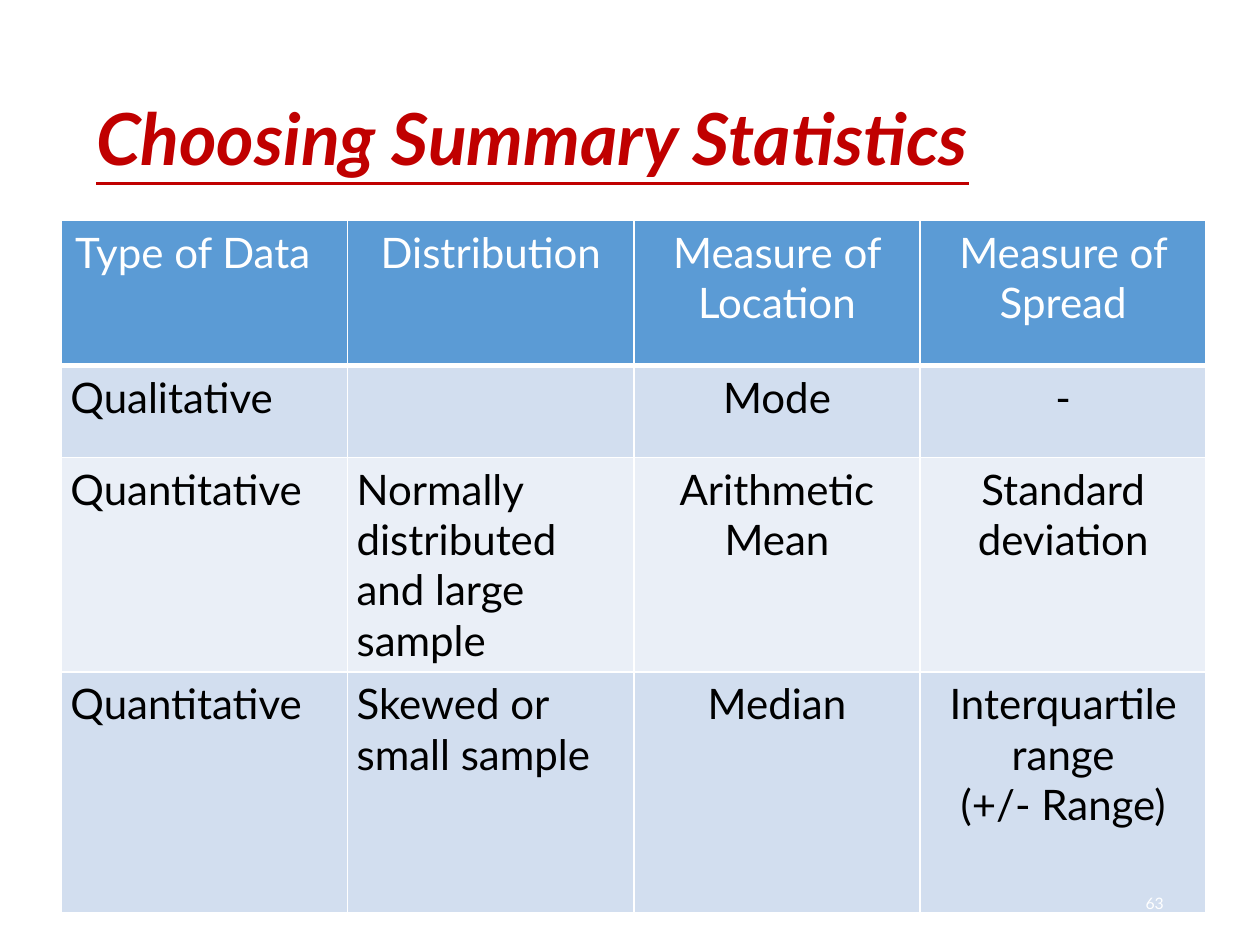
from lxml.etree import SubElement as Sub
from pptx import Presentation
from pptx.dml.color import RGBColor as RGB
from pptx.enum.text import MSO_ANCHOR as Anchor, PP_ALIGN as Align
from pptx.oxml.ns import qn
from pptx.util import Cm, Pt

FONT = "Lato"
RED = RGB(0xC0, 0x00, 0x00)
WHITE = RGB(0xFF, 0xFF, 0xFF)
BLACK = RGB(0x00, 0x00, 0x00)
BLUE = RGB(0x5B, 0x9B, 0xD5)
BANDS = [RGB(0xD2, 0xDE, 0xEF), RGB(0xEA, 0xEF, 0xF7)]

ROWS = [
    ["Type of Data", "Distribution", "Measure of Location", "Measure of Spread"],
    ["Qualitative", "", "Mode", "-"],
    ["Quantitative", "Normally distributed and large sample",
     "Arithmetic Mean", "Standard deviation"],
    ["Quantitative", "Skewed or small sample", "Median",
     "Interquartile range\n(+/- Range)"],
]
HEIGHTS = [2.92, 1.85, 3.58, 4.85]


def add_run(para, text, size, color):
    run = para.add_run()
    run.text = text
    font = run.font
    font.name, font.size = FONT, Pt(size)
    font.color.rgb = color
    return font


def add_box(slide, box, anchor):
    frame = slide.shapes.add_textbox(*map(Cm, box)).text_frame
    frame.word_wrap = True
    frame.vertical_anchor = anchor
    frame.margin_left = frame.margin_right = Cm(0.19)
    frame.margin_top = frame.margin_bottom = Cm(0.1)
    return frame.paragraphs[0]


def add_title(slide, box):
    para = add_box(slide, box, Anchor.MIDDLE)
    para.line_spacing = 0.9
    font = add_run(para, "Choosing Summary Statistics", 41, RED)
    font.bold = font.italic = font.underline = True


def add_number(slide, box):
    para = add_box(slide, box, Anchor.MIDDLE)
    para.alignment = Align.RIGHT
    add_run(para, "63", 9, WHITE)


def set_edges(cell, base):
    """Draw white borders, with the given width at the bottom."""
    props = cell._tc.get_or_add_tcPr()
    for side, width in zip("LRTB", (1, 1, 1, base)):
        line = Sub(props, qn(f"a:ln{side}"), w=str(Pt(width)))
        fill = Sub(line, qn("a:solidFill"))
        Sub(fill, qn("a:srgbClr"), val=str(WHITE))


def fill_cell(cell, text, row, col):
    head = row == 0
    set_edges(cell, 3 if head else 1)
    cell.fill.solid()
    cell.fill.fore_color.rgb = BLUE if head else BANDS[(row - 1) % 2]
    cell.margin_left = cell.margin_right = Cm(0.18)
    cell.margin_top = cell.margin_bottom = Cm(0.13)
    frame = cell.text_frame
    for num, part in enumerate(text.split("\n")):
        para = frame.add_paragraph() if num else frame.paragraphs[0]
        para.alignment = Align.CENTER if head or col > 1 else Align.LEFT
        if part:
            add_run(para, part, 24, WHITE if head else BLACK)


def add_grid(slide, box):
    shape = slide.shapes.add_table(len(ROWS), len(ROWS[0]), *map(Cm, box))
    table = shape.table
    for col in table.columns:
        col.width = Cm(box[2] / len(ROWS[0]))
    for row, texts in enumerate(ROWS):
        table.rows[row].height = Cm(HEIGHTS[row])
        for col, text in enumerate(texts):
            fill_cell(table.cell(row, col), text, row, col)
    # The first heading sits a little left of centre
    table.cell(0, 0).margin_right = Cm(0.66)


def main():
    deck = Presentation()
    deck.slide_width, deck.slide_height = Cm(25.4), Cm(19.05)
    slide = deck.slides.add_slide(deck.slide_layouts[6])
    add_title(slide, (1.75, 1.02, 21.9, 3.68))
    add_grid(slide, (1.24, 4.45, 23.08, sum(HEIGHTS)))
    add_number(slide, (20.65, 17.7, 3, 1))
    deck.save("out.pptx")


if __name__ == "__main__":
    main()
